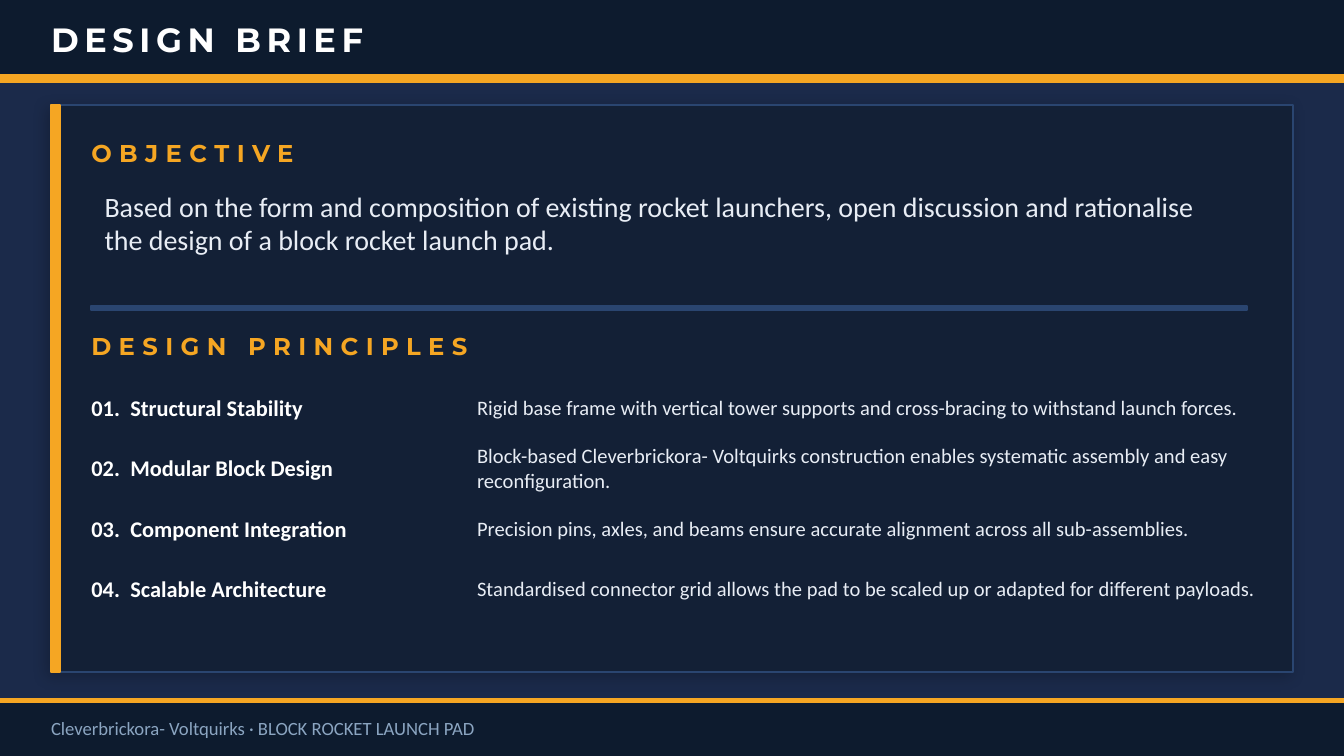
from lxml.etree import SubElement
from pptx import Presentation
from pptx.dml.color import RGBColor
from pptx.enum.shapes import MSO_SHAPE
from pptx.enum.text import MSO_ANCHOR
from pptx.oxml.ns import qn
from pptx.util import Inches, Pt

BACKGROUND = RGBColor(0x1B, 0x2A, 0x4A)
NAVY = RGBColor(0x0D, 0x1B, 0x2E)
PANEL = RGBColor(0x13, 0x20, 0x36)
STEEL = RGBColor(0x2A, 0x45, 0x70)
AMBER = RGBColor(0xF5, 0xA6, 0x23)
WHITE = RGBColor(0xFF, 0xFF, 0xFF)
PALE = RGBColor(0xE8, 0xED, 0xF5)
MUTED = RGBColor(0x8B, 0xA5, 0xC1)

SLIDE_WIDTH = 10
SLIDE_HEIGHT = SLIDE_WIDTH * 9 / 16
MARGIN = 0.38

OBJECTIVE = (
    "Based on the form and composition of existing rocket launchers, open discussion "
    "and rationalise the design of a block rocket launch pad."
)
PRINCIPLES = [
    ("Structural Stability",
     "Rigid base frame with vertical tower supports and cross-bracing to withstand launch forces."),
    ("Modular Block Design",
     "Block-based Cleverbrickora- Voltquirks construction enables systematic assembly and easy "
     "reconfiguration."),
    ("Component Integration",
     "Precision pins, axles, and beams ensure accurate alignment across all sub-assemblies."),
    ("Scalable Architecture",
     "Standardised connector grid allows the pad to be scaled up or adapted for different payloads."),
]


def add_bar(page, left, top, width, height, fill, line=None):
    bar = page.shapes.add_shape(
        MSO_SHAPE.RECTANGLE, Inches(left), Inches(top), Inches(width), Inches(height))
    bar.shadow.inherit = False
    bar.fill.solid()
    bar.fill.fore_color.rgb = fill
    bar.line.color.rgb = line or fill
    bar.line.width = Pt(1)
    return bar


def add_soft_shadow(shape):
    effects = shape._element.spPr.find(qn("a:effectLst"))
    shadow = SubElement(effects, qn("a:outerShdw"), blurRad=str(Pt(8)), dist=str(Pt(3)),
                        dir=str(135 * 60000), algn="bl", rotWithShape="0")
    color = SubElement(shadow, qn("a:srgbClr"), val="000000")
    SubElement(color, qn("a:alpha"), val="22000")


def add_text(page, left, top, width, height, text, size, color,
             font="Calibri", bold=False, spacing=0, tab=0, inset=False):
    box = page.shapes.add_textbox(Inches(left), Inches(top), Inches(width), Inches(height))
    frame = box.text_frame
    frame.word_wrap = True
    if not inset:
        frame.vertical_anchor = MSO_ANCHOR.MIDDLE
        frame.margin_left = frame.margin_right = frame.margin_top = frame.margin_bottom = 0
    frame.text = text
    para = frame.paragraphs[0]
    if tab:
        tabs = SubElement(para._p.get_or_add_pPr(), qn("a:tabLst"))
        SubElement(tabs, qn("a:tab"), pos=str(Inches(tab)), algn="l")
    for span in para.runs:
        span.font.name = font
        span.font.size = Pt(size)
        span.font.bold = bold
        span.font.color.rgb = color
        if spacing:
            span._r.get_or_add_rPr().set("spc", str(spacing * 100))


def add_heading(page, left, top, width, text):
    add_text(page, left, top, width, 0.38, text, 13, AMBER, "Montserrat", True, 4)


def add_header(page, left, top, width):
    add_bar(page, left, top, width, 0.56, NAVY)
    add_bar(page, left, top + 0.56, width, 0.05, AMBER)
    add_text(page, left + MARGIN, top + 0.08, 6.5, 0.42, "DESIGN BRIEF", 18, WHITE,
             "Montserrat", True, 3)


def add_footer(page, left, top, width):
    add_bar(page, left, top, width, 0.04, AMBER)
    add_bar(page, left, top + 0.04, width, 0.39, NAVY)
    add_text(page, left + MARGIN, top + 0.06, 7, 0.32,
             "Cleverbrickora- Voltquirks · BLOCK ROCKET LAUNCH PAD", 10, MUTED)


def add_panel(page, left, top, width, height):
    panel = add_bar(page, left, top, width, height, PANEL, STEEL)
    add_soft_shadow(panel)
    add_bar(page, left, top, 0.07, height, AMBER)


def add_objective(page, left, top, width):
    add_heading(page, left, top, width, "OBJECTIVE")
    add_text(page, left, top + 0.41, width, 0.9, OBJECTIVE, 15, PALE, inset=True)
    add_bar(page, left, top + 1.33, width, 0.03, STEEL)


def add_principles(page, left, top, width):
    add_heading(page, left, top, width, "DESIGN PRINCIPLES")
    for index, (name, detail) in enumerate(PRINCIPLES):
        row_top = top + 0.46 + index * 0.45
        add_text(page, left, row_top, 2.8, 0.38, f"{index + 1:02}.\t{name}", 12, WHITE,
                 bold=True, tab=0.29)
        add_text(page, left + 2.87, row_top, 5.8, 0.38, detail, 11, PALE)


def main():
    deck = Presentation()
    deck.slide_width = Inches(SLIDE_WIDTH)
    deck.slide_height = Inches(SLIDE_HEIGHT)
    page = deck.slides.add_slide(deck.slide_layouts[6])
    page.background.fill.solid()
    page.background.fill.fore_color.rgb = BACKGROUND
    add_header(page, 0, 0, SLIDE_WIDTH)
    add_footer(page, 0, 5.2, SLIDE_WIDTH)
    add_panel(page, MARGIN, 0.78, SLIDE_WIDTH - 2 * MARGIN, 4.22)
    add_objective(page, MARGIN + 0.3, 0.95, 8.6)
    add_principles(page, MARGIN + 0.3, 2.38, 8.6)
    deck.save("out.pptx")


if __name__ == "__main__":
    main()
